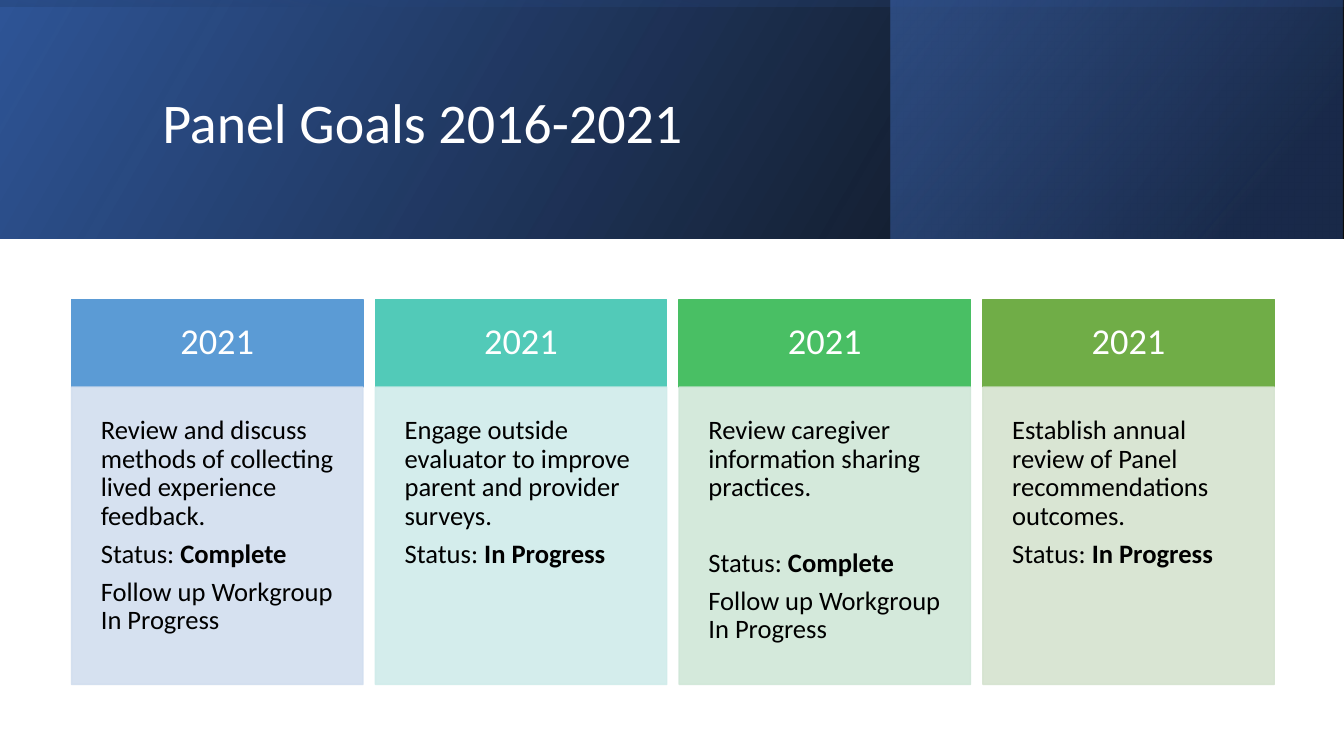
from dataclasses import dataclass

from lxml import etree
from pptx import Presentation
from pptx import util as u
from pptx.dml.color import RGBColor
from pptx.enum import shapes, text
from pptx.oxml import ns

WIDE, HIGH = 13.33, 7.5
BAND = 0.316 * HIGH
LEFT, PITCH, COL = 0.71, 3.013, 2.89
TOP, HEAD, BODY = 2.97, 0.87, 2.95

WHITE = RGBColor(0xFF, 0xFF, 0xFF)
BLACK = RGBColor(0x00, 0x00, 0x00)
NAVY = RGBColor(0x20, 0x38, 0x64)
ROYAL = RGBColor(0x2F, 0x55, 0x97)
AZURE = RGBColor(0x44, 0x72, 0xC4)
BLUE, ICE = RGBColor(0x5B, 0x9B, 0xD5), RGBColor(0xD2, 0xDE, 0xEF)
TEAL, FOAM = RGBColor(0x52, 0xCA, 0xB8), RGBColor(0xD0, 0xEC, 0xEA)
GREEN, MINT = RGBColor(0x49, 0xBF, 0x64), RGBColor(0xD0, 0xE7, 0xD8)
OLIVE, SAGE = RGBColor(0x70, 0xAD, 0x47), RGBColor(0xD5, 0xE3, 0xCF)


@dataclass
class Stop:
    place: float
    color: RGBColor
    alpha: int


@dataclass
class Layer:
    box: tuple[float, float, float, float]
    angle: int
    stops: tuple[Stop, Stop]
    turn: int = 0


@dataclass
class Goal:
    color: RGBColor
    tint: RGBColor
    task: str
    status: str
    follow: str = ""
    gap: float = 0


LAYERS = [
    Layer((0, 0, WIDE, BAND), 330, (Stop(0, BLACK, 96), Stop(1, ROYAL, 100))),
    Layer((0.663 * WIDE, 0, 0.336 * WIDE, BAND), 320,
          (Stop(0.19, NAVY, 68), Stop(1, AZURE, 48))),
    Layer(((WIDE - BAND) / 2, (BAND - WIDE) / 2, BAND, WIDE), 350,
          (Stop(0.23, ROYAL, 16), Stop(0.99, BLACK, 45)), 270),
]

FOLLOW = "Follow up Workgroup In Progress"
GOALS = [
    Goal(BLUE, ICE, "Review and discuss methods of collecting lived experience feedback.",
         "Complete", FOLLOW),
    Goal(TEAL, FOAM, "Engage outside evaluator to improve parent and provider surveys.",
         "In Progress"),
    Goal(GREEN, MINT, "Review caregiver information sharing practices.",
         "Complete", FOLLOW, gap=27),
    Goal(OLIVE, SAGE, "Establish annual review of Panel recommendations outcomes.",
         "In Progress"),
]


def fade(shape, *alphas: int) -> None:
    """Set the opacity, in percent, of the shape's colours in order."""
    colors = list(shape._element.spPr.iter(ns.qn("a:srgbClr")))
    for color, alpha in zip(colors, alphas):
        etree.SubElement(color, ns.qn("a:alpha")).set("val", str(alpha * 1000))


def add_rect(slide, x: float, y: float, w: float, h: float):
    rect = slide.shapes.add_shape(
        shapes.MSO_SHAPE.RECTANGLE, *(u.Inches(v) for v in (x, y, w, h)))
    rect.shadow.inherit = False
    return rect


def add_layer(slide, layer: Layer) -> None:
    rect = add_rect(slide, *layer.box)
    rect.rotation = layer.turn
    rect._element.spPr.xfrm.set("flipH", "1")
    rect.line.fill.background()
    rect.fill.gradient()
    rect.fill.gradient_angle = 360 - layer.angle
    for stop, want in zip(rect.fill.gradient_stops, layer.stops):
        stop.position = want.place
        stop.color.rgb = want.color
    fade(rect, *(stop.alpha for stop in layer.stops))


def add_cell(slide, x: float, y: float, h: float, color: RGBColor):
    cell = add_rect(slide, x, y, COL, h)
    cell.fill.solid()
    cell.fill.fore_color.rgb = color
    cell.line.color.rgb = color
    cell.line.width = u.Pt(1)
    return cell


def write(shape, *paras, size: float, color: RGBColor, align=text.PP_ALIGN.LEFT,
          anchor=text.MSO_ANCHOR.MIDDLE, inset: float = 0.1, after: float = 0,
          gaps: tuple = ()) -> None:
    """Fill the shape with paragraphs, each a list of (words, bold) runs."""
    frame = shape.text_frame
    frame.word_wrap = True
    frame.auto_size = text.MSO_AUTO_SIZE.NONE
    frame.vertical_anchor = anchor
    frame.margin_left = frame.margin_right = u.Inches(inset)
    frame.margin_top = frame.margin_bottom = u.Inches(inset)
    for i, runs in enumerate(paras):
        para = frame.add_paragraph() if i else frame.paragraphs[0]
        para.alignment = align
        para.line_spacing = 0.9
        para.space_before = u.Pt(gaps[i] if i < len(gaps) else 0)
        para.space_after = u.Pt(after)
        for words, bold in runs:
            run = para.add_run()
            run.text = words
            run.font.name = "Calibri"
            run.font.size = u.Pt(size)
            run.font.bold = bold
            run.font.color.rgb = color


def add_goal(slide, col: int, goal: Goal) -> None:
    x = LEFT + col * PITCH
    head = add_cell(slide, x, TOP, HEAD, goal.color)
    write(head, [("2021", False)], size=26, color=WHITE,
          align=text.PP_ALIGN.CENTER, inset=0.23)
    body = add_cell(slide, x, TOP + HEAD, BODY, goal.tint)
    fade(body, 90, 90)
    paras = [[(goal.task, False)], [("Status: ", False), (goal.status, True)]]
    if goal.follow:
        paras.append([(goal.follow, False)])
    write(body, *paras, size=19, color=BLACK, anchor=text.MSO_ANCHOR.TOP,
          inset=0.29, after=6.5, gaps=(0, goal.gap))


def main() -> None:
    deck = Presentation()
    deck.slide_width, deck.slide_height = u.Inches(WIDE), u.Inches(HIGH)
    slide = deck.slides.add_slide(deck.slide_layouts[5])
    for layer in LAYERS:
        add_layer(slide, layer)

    title = slide.shapes.title
    title.left, title.top = u.Inches(1.51), u.Inches(0.38)
    title.width, title.height = u.Inches(10.63), u.Inches(1.72)
    write(title, [("Panel Goals 2016-2021", False)], size=40, color=WHITE)
    slide.shapes._spTree.append(title._element)  # lift above the band

    for col, goal in enumerate(GOALS):
        add_goal(slide, col, goal)
    deck.save("out.pptx")


if __name__ == "__main__":
    main()
